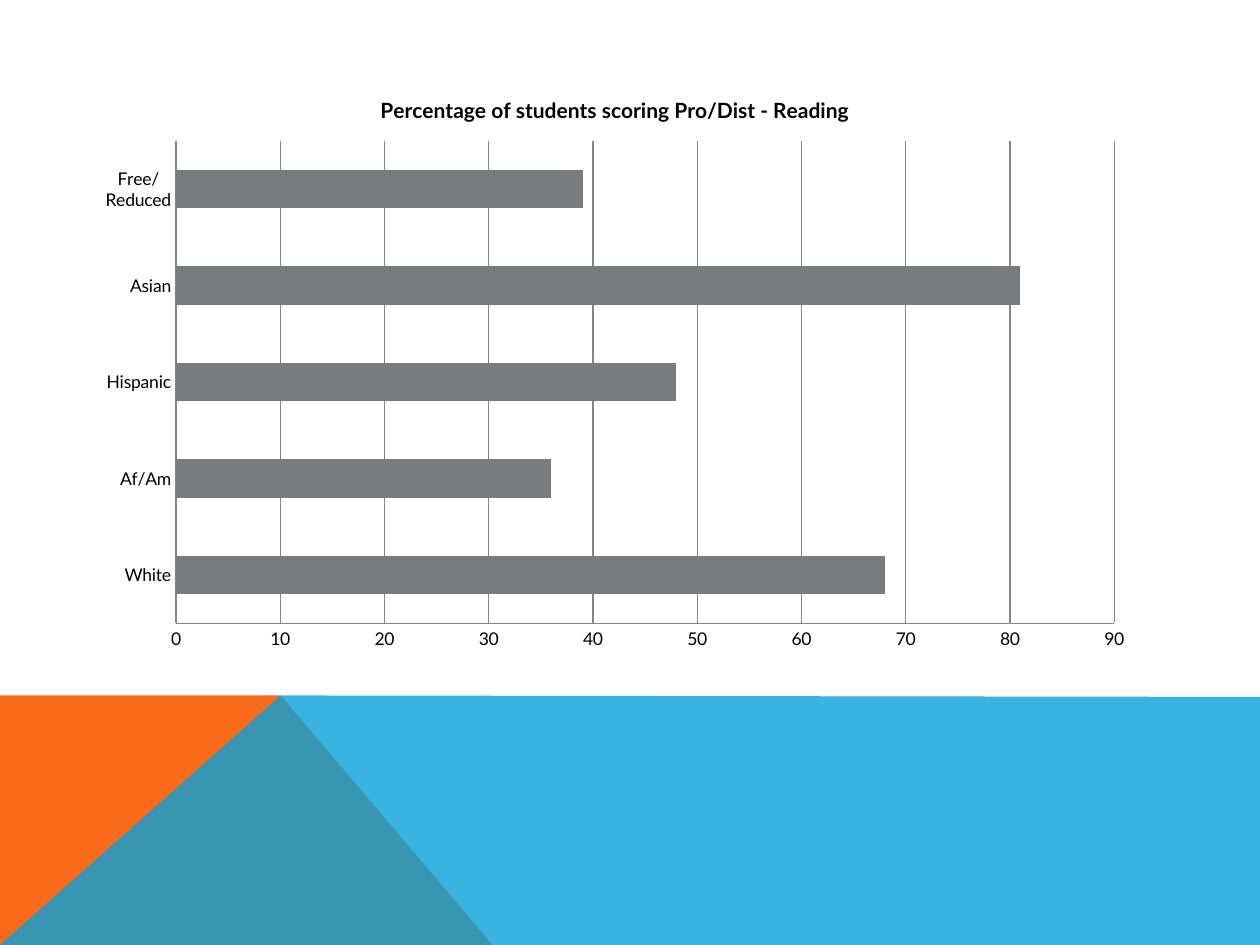
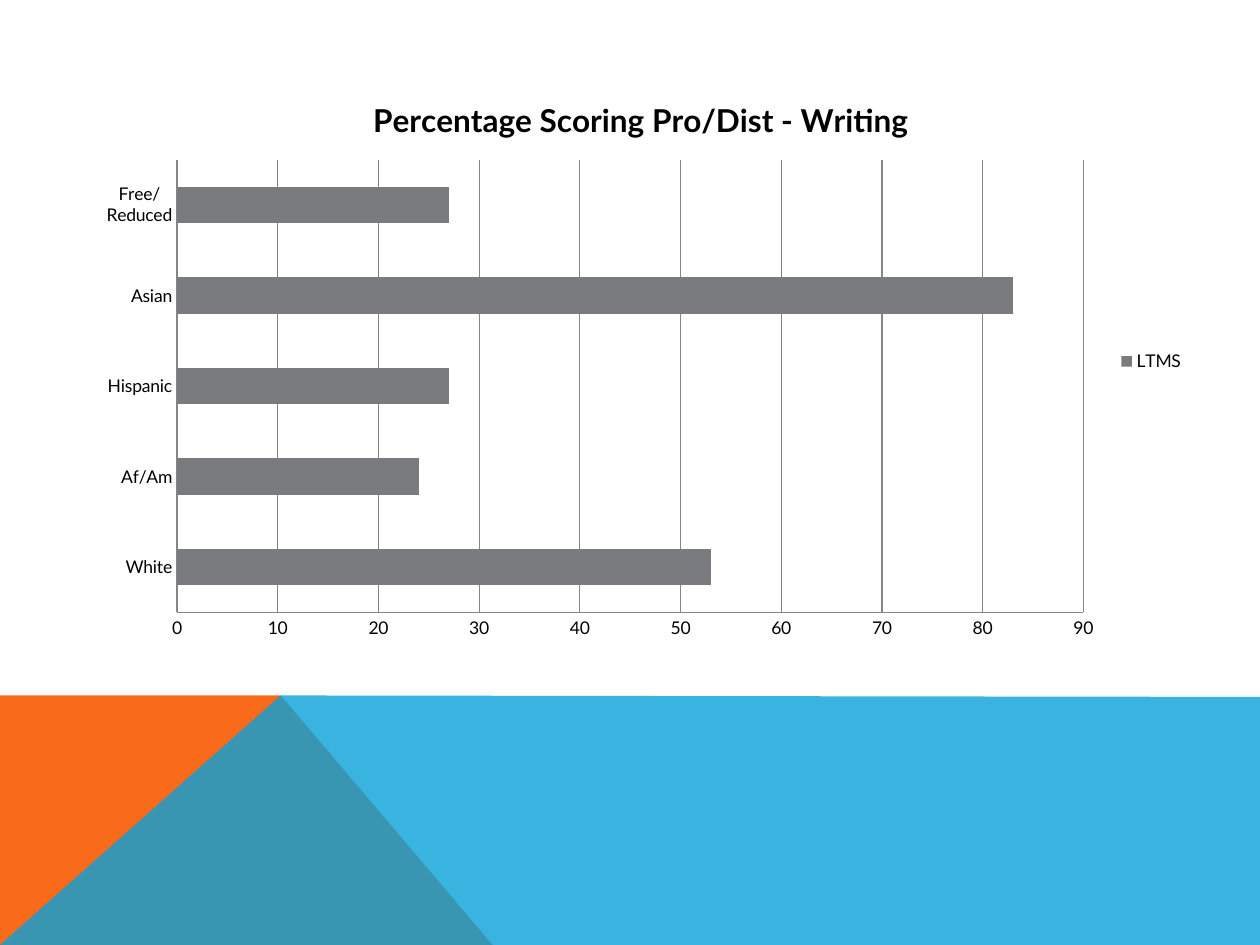
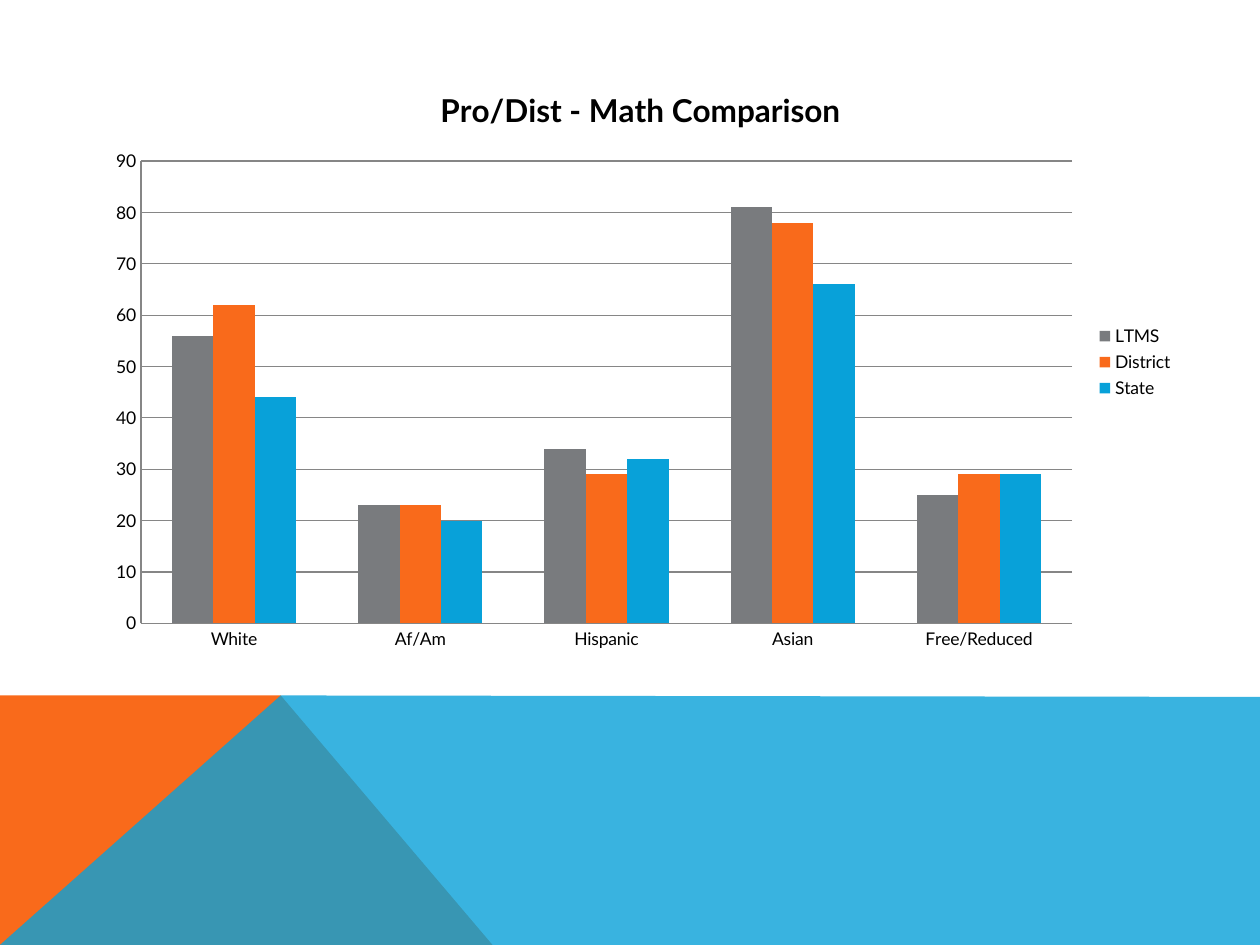
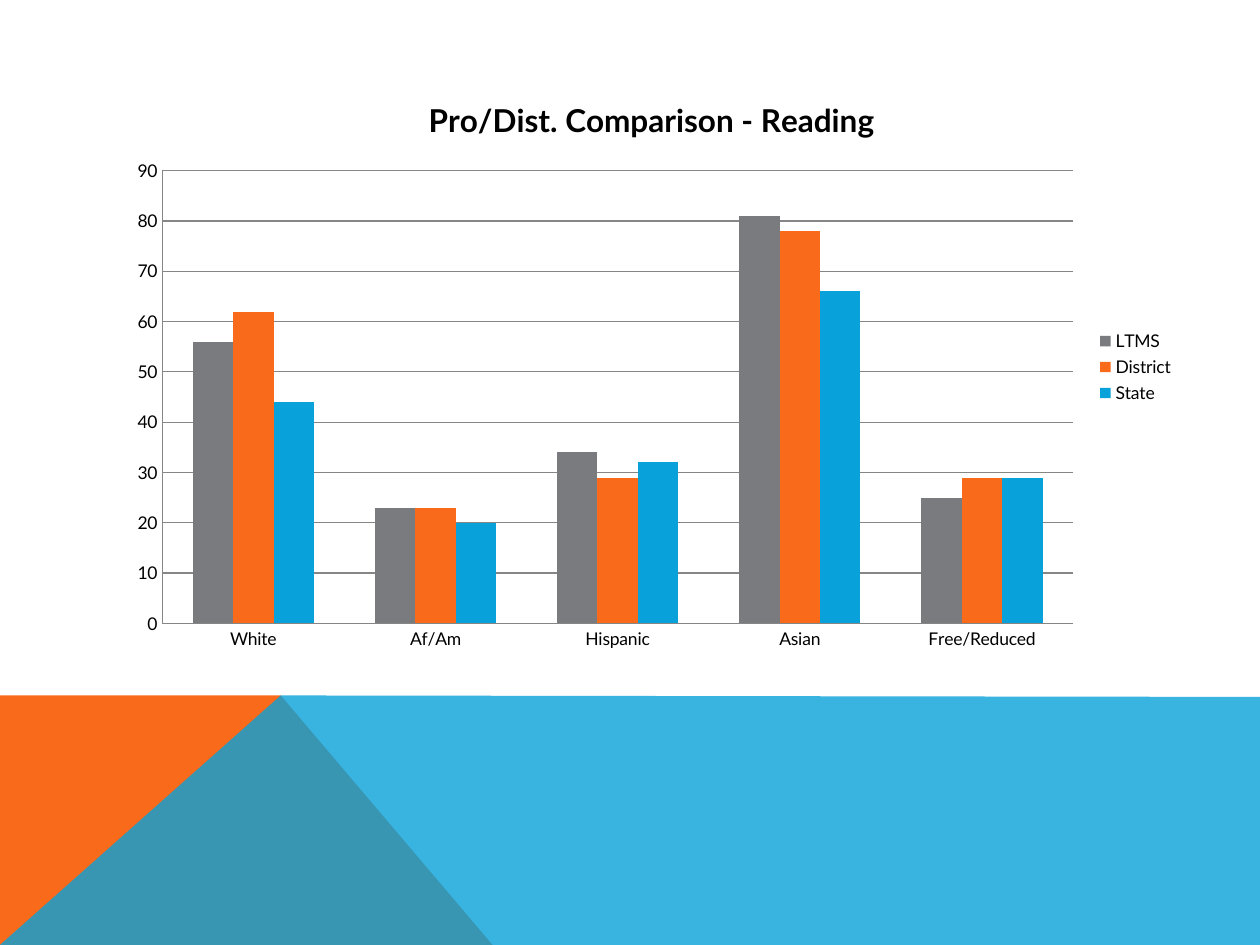
"""Build four slides of student score charts above a shared coloured band."""
from lxml import etree
from pptx import Presentation
from pptx.chart.data import CategoryChartData
from pptx.dml.color import RGBColor
from pptx.enum.chart import XL_CHART_TYPE as CT, XL_LEGEND_POSITION as LP, XL_TICK_MARK as TM
from pptx.oxml.ns import qn
from pptx.util import Cm, Pt

GREY = RGBColor(0x79, 0x7B, 0x7E)
ORANGE = RGBColor(0xF9, 0x6A, 0x1B)
BLUE = RGBColor(0x08, 0xA1, 0xD9)
LINE = RGBColor(0x86, 0x86, 0x86)
BLACK = RGBColor(0, 0, 0)
FONT = "Lato"
W, H = 25.4, 19.05
BAND_TOP, PEAK = 14.02, 5.66

CATEGORIES = ["White", "Af/Am", "Hispanic", "Asian", "Free/Reduced"]
COLORS = [GREY, ORANGE, BLUE]
COMPARISON = {
    "LTMS": [56, 23, 34, 81, 25],
    "District": [62, 23, 29, 78, 29],
    "State": [44, 20, 32, 66, 29],
}
CHARTS = [
    ("Percentage of students scoring Pro/Dist - Reading", 12, CT.BAR_CLUSTERED,
     (1.7, 1.47, 21.39, 11.86), False, {"Series 1": [68, 36, 48, 81, 39]}),
    ("Percentage Scoring Pro/Dist - Writing", 18, CT.BAR_CLUSTERED,
     (1.7, 1.47, 22.43, 11.63), True, {"LTMS": [53, 24, 27, 83, 27]}),
    ("Pro/Dist - Math Comparison", 18, CT.COLUMN_CLUSTERED,
     (1.9, 1.27, 22.02, 12.06), True, COMPARISON),
    ("Pro/Dist. Comparison - Reading", 18, CT.COLUMN_CLUSTERED,
     (2.34, 1.47, 21.59, 11.86), True, COMPARISON),
]
BANDS = [
    (ORANGE, 100, [(0, H), (0, BAND_TOP), (PEAK, BAND_TOP), (9.93, H)]),
    (BLUE, 80, [(0, H), (PEAK, BAND_TOP), (W, 14.05), (W, H)]),
]


def add_text(tf, text, size=10, bold=False, color=BLACK):
    r = tf.paragraphs[0].add_run()
    r.text = text
    r.font.name, r.font.size, r.font.bold = FONT, Pt(size), bold
    r.font.color.rgb = color


prs = Presentation()
prs.slide_width, prs.slide_height = Cm(W), Cm(H)
layout = prs.slide_layouts[6]
slides = [prs.slides.add_slide(layout) for _ in CHARTS]

for i, (color, opacity, points) in enumerate(BANDS):
    points = [(Cm(x), Cm(y)) for x, y in points]
    builder = slides[0].shapes.build_freeform(*points[0])
    builder.add_line_segments(points[1:], close=True)
    sp = builder.convert_to_shape()
    sp.shadow.inherit = False
    sp.fill.solid()
    sp.fill.fore_color.rgb = color
    sp.line.fill.background()
    if opacity < 100:
        clr = sp.element.spPr.find(f"{qn('a:solidFill')}/{qn('a:srgbClr')}")
        etree.SubElement(clr, qn("a:alpha")).set("val", str(opacity * 1000))
    layout.shapes.element.insert(2 + i, sp.element)

for s, (title, size, kind, box, legend, series) in zip(slides, CHARTS):
    data = CategoryChartData()
    data.categories = CATEGORIES
    for name, values in series.items():
        data.add_series(name, values)
    chart = s.shapes.add_chart(kind, *map(Cm, box), data).chart
    chart.font.name, chart.font.size = FONT, Pt(10)
    chart.font.color.rgb = BLACK
    chart.has_title = True
    add_text(chart.chart_title.text_frame, title, size=size, bold=True)
    chart.chart_title.include_in_layout = False
    chart.has_legend = legend
    if legend:
        chart.legend.position = LP.RIGHT
        chart.legend.include_in_layout = False

    value_axis = chart.value_axis
    value_axis.minimum_scale, value_axis.maximum_scale = 0, 90
    value_axis.major_unit = 10
    value_axis.has_major_gridlines = True
    for axis in (chart.category_axis, value_axis):
        axis.major_tick_mark = axis.minor_tick_mark = TM.NONE
    for part in (chart.category_axis, value_axis, value_axis.major_gridlines):
        part.format.line.color.rgb = LINE
        part.format.line.width = Pt(0.75)

    plot = chart.plots[0]
    plot.gap_width, plot.overlap = 150, 0
    plot.vary_by_categories = False
    for ser, color in zip(plot.series, COLORS):
        ser.format.fill.solid()
        ser.format.fill.fore_color.rgb = color

prs.save("out.pptx")
